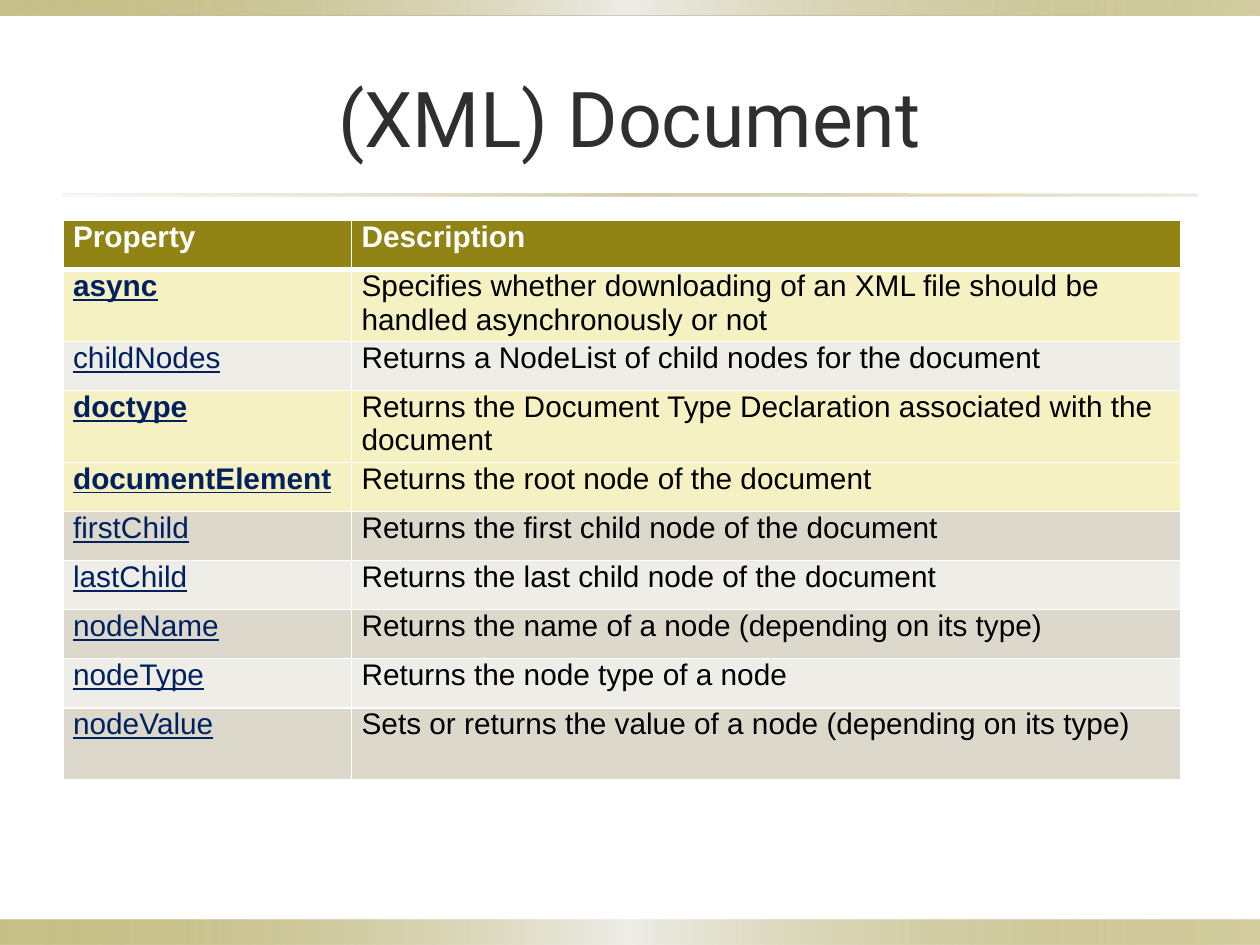
"""Build the slide listing the properties of the XML Document object."""
import pptx
import pptx.dml.color
import pptx.enum.shapes
import pptx.enum.text
import pptx.oxml
import pptx.oxml.ns
import pptx.util

Inches, Pt, qn = pptx.util.Inches, pptx.util.Pt, pptx.oxml.ns.qn

TITLE = "(XML) Document"
HEADER = ("Property", "Description")
ROWS = [
    ("async", "Specifies whether downloading of an XML file should be handled asynchronously or not"),
    ("childNodes", "Returns a NodeList of child nodes for the document"),
    ("doctype", "Returns the Document Type Declaration associated with the document"),
    ("documentElement", "Returns the root node of the document"),
    ("firstChild", "Returns the first child node of the document"),
    ("lastChild", "Returns the last child node of the document"),
    ("nodeName", "Returns the name of a node (depending on its type)"),
    ("nodeType", "Returns the node type of a node"),
    ("nodeValue", "Sets or returns the value of a node (depending on its type)"),
]
KEY_PROPERTIES = {"async", "doctype", "documentElement"}
TALL_ROWS = {"async", "doctype", "nodeValue"}
COLUMN_WIDTHS = (2.29, 6.58)
ROW_HEIGHT, TALL_HEIGHT = 0.39, 0.57
OLIVE, CREAM, WHITE = "918415", "F6F1C3", "FFFFFF"
BANDS = ("EEEDE8", "DCD9CC")
BAR_STOPS = [(0, OLIVE, 50), (50, "EEEDE8", 100), (100, OLIVE, 40)]
RULE_STOPS = [(0, "DCD9CC", 20), (50, OLIVE, 40), (100, "DCD9CC", 50)]
BARS = [
    ((0, 7.3, 10, 0.2), BAR_STOPS),
    ((0, 0, 10, 0.12), BAR_STOPS),
    ((0.5, 1.54, 9, 0.02), RULE_STOPS),
]


def rgb(value):
    return pptx.dml.color.RGBColor.from_string(value)


def element(xml):
    return pptx.oxml.parse_xml(xml.replace(">", f' {pptx.oxml.ns.nsdecls("a")}>', 1))


def set_font(font, color, **values):
    for name, value in values.items():
        setattr(font, name, value)
    font.color.rgb = rgb(color)


def add_bar(s, box, stops):
    sp = s.shapes.add_shape(pptx.enum.shapes.MSO_SHAPE.RECTANGLE, *map(Inches, box))
    sp.shadow.inherit = False
    sp.line.fill.background()
    sp.fill.gradient()
    sp.fill.gradient_angle = 0
    gradient = sp._element.spPr.find(qn("a:gradFill"))
    items = "".join(
        f'<a:gs pos="{pos * 1000}"><a:srgbClr val="{color}">'
        f'<a:alpha val="{alpha * 1000}"/></a:srgbClr></a:gs>'
        for pos, color, alpha in stops
    )
    gradient.replace(gradient.find(qn("a:gsLst")), element(f"<a:gsLst>{items}</a:gsLst>"))


def set_borders(cell, bottom):
    tc_pr = cell._tc.get_or_add_tcPr()
    for i, (side, width) in enumerate(zip("LRTB", (1, 1, 1, bottom))):
        tc_pr.insert(i, element(
            f'<a:ln{side} w="{Pt(width)}"><a:solidFill><a:srgbClr val="{WHITE}"/>'
            f"</a:solidFill></a:ln{side}>"))


def fill_cell(cell, text, fill, color, bottom, **values):
    for name, value in dict(left=0.08, right=0, top=0, bottom=0).items():
        setattr(cell, f"margin_{name}", Inches(value))
    cell.fill.solid()
    cell.fill.fore_color.rgb = rgb(fill)
    set_borders(cell, bottom)
    r = cell.text_frame.paragraphs[0].add_run()
    r.text = text
    set_font(r.font, color, name="Arial", size=Pt(17), **values)


def add_properties(s):
    heights = [TALL_HEIGHT if name in TALL_ROWS else ROW_HEIGHT for name, _ in (HEADER, *ROWS)]
    table = s.shapes.add_table(
        len(heights), len(COLUMN_WIDTHS), Inches(0.5), Inches(1.75),
        Inches(sum(COLUMN_WIDTHS)), Inches(sum(heights))).table
    for column, width in zip(table.columns, COLUMN_WIDTHS):
        column.width = Inches(width)
    for row, height in zip(table.rows, heights):
        row.height = Inches(height)
    for col, text in enumerate(HEADER):
        fill_cell(table.cell(0, col), text, OLIVE, WHITE, 3, bold=True)
    for i, (name, description) in enumerate(ROWS, 1):
        key = name in KEY_PROPERTIES
        fill = CREAM if key else BANDS[i % 2]
        fill_cell(table.cell(i, 0), name, fill, "002060", 1, bold=key, underline=True)
        fill_cell(table.cell(i, 1), description, fill, "000000", 1, bold=False)


def add_title(s):
    sp = s.shapes.title
    for name, value in dict(left=0.5, top=0.3, width=9, height=1.25).items():
        setattr(sp, name, Inches(value))
    tf = sp.text_frame
    tf.text = TITLE
    tf.vertical_anchor = pptx.enum.text.MSO_ANCHOR.MIDDLE
    p = tf.paragraphs[0]
    p.alignment = pptx.enum.text.PP_ALIGN.CENTER
    set_font(p.runs[0].font, "2F2F2F", name="Roboto", size=Pt(44))
    s.shapes._spTree.append(sp._element)


def main():
    prs = pptx.Presentation()
    prs.slide_width, prs.slide_height = Inches(10), Inches(7.5)
    s = prs.slides.add_slide(prs.slide_layouts.get_by_name("Title Only"))
    for box, stops in BARS:
        add_bar(s, box, stops)
    add_title(s)
    add_properties(s)
    prs.save("out.pptx")


if __name__ == "__main__":
    main()
